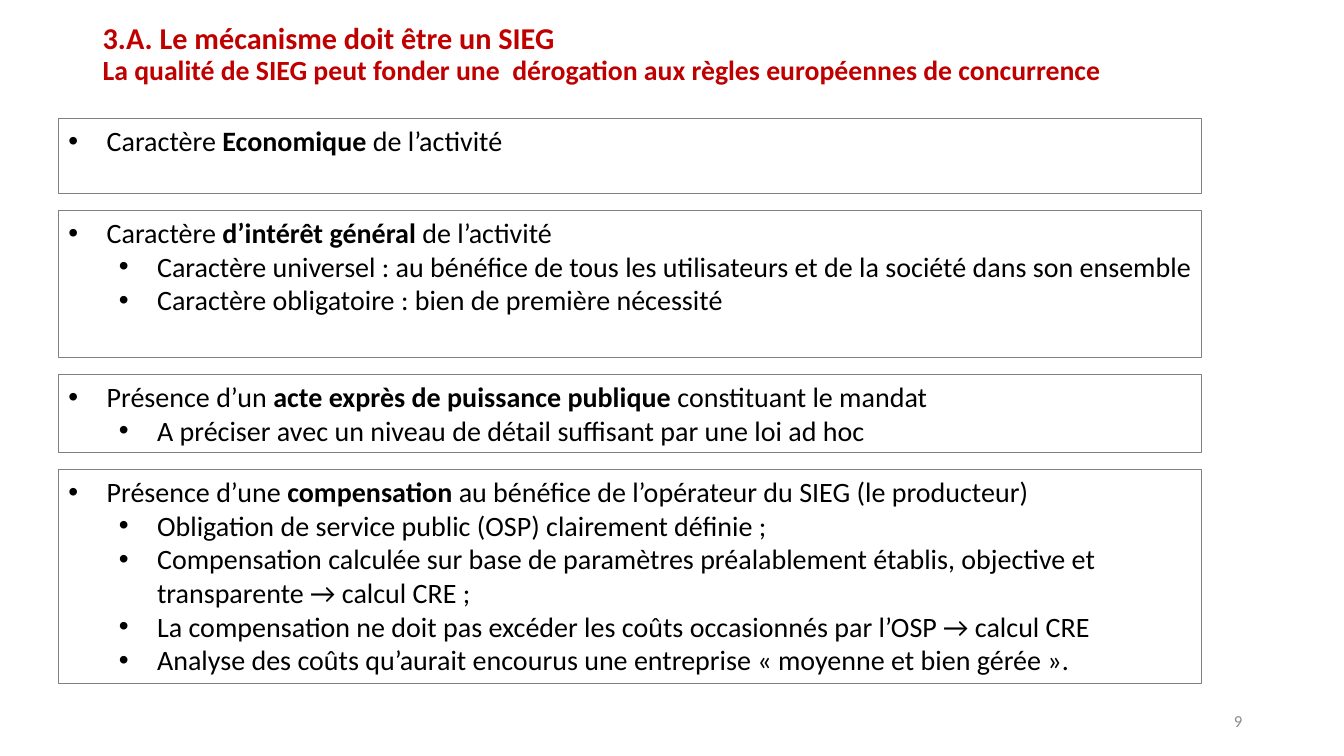
from dataclasses import dataclass

from lxml import etree
from pptx import Presentation
from pptx.dml.color import RGBColor
from pptx.enum.shapes import MSO_SHAPE
from pptx.enum.text import MSO_ANCHOR, PP_ALIGN
from pptx.oxml.ns import qn
from pptx.util import Inches, Pt

RECTANGLE = MSO_SHAPE.RECTANGLE
TOP, MIDDLE = MSO_ANCHOR.TOP, MSO_ANCHOR.MIDDLE
LEFT, RIGHT = PP_ALIGN.LEFT, PP_ALIGN.RIGHT

FONT = "Calibri"
RED, BLACK, GREY, PALE_GREY = "C00000", "000000", "808080", "8C8C8C"
CRITERIA_LEFT, CRITERIA_TOP, CRITERIA_WIDTH, CRITERIA_GAP = 0.58, 1.18, 11.34, 0.17
HANGING, LEVEL_STEP = 0.38, 0.5


@dataclass(frozen=True)
class Criterion:
    height: float
    before: str
    keyword: str
    after: str
    details: tuple[str, ...] = ()


CRITERIA = (
    Criterion(0.74, "Caractère ", "Economique", " de l’activité"),
    Criterion(1.46, "Caractère ", "d’intérêt général ", "de l’activité", (
        "Caractère universel : au bénéfice de tous les utilisateurs et de la société dans son ensemble",
        "Caractère obligatoire : bien de première nécessité",
    )),
    Criterion(0.77, "Présence d’un ", "acte exprès de puissance publique ", "constituant le mandat", (
        "A préciser avec un niveau de détail suffisant par une loi ad hoc",
    )),
    Criterion(2.12, "Présence d’une ", "compensation", " au bénéfice de l’opérateur du SIEG (le producteur)", (
        "Obligation de service public (OSP) clairement définie ;",
        "Compensation calculée sur base de paramètres préalablement établis, objective et transparente → calcul CRE ;",
        "La compensation ne doit pas excéder les coûts occasionnés par l’OSP → calcul CRE",
        "Analyse des coûts qu’aurait encourus une entreprise « moyenne et bien gérée ».",
    )),
)


def rgb(value: str) -> RGBColor:
    return RGBColor.from_string(value)


def apply(target, values: dict) -> None:
    for name, value in values.items():
        setattr(target, name, value)


def add_run(paragraph, text: str, size: float, color: str, bold: bool = False) -> None:
    run = paragraph.add_run()
    run.text = text
    apply(run.font, {"name": FONT, "size": Pt(size), "bold": bold})
    run.font.color.rgb = rgb(color)


def add_bullet(paragraph, level: int) -> None:
    apply(paragraph, {"level": level, "alignment": LEFT})
    properties = paragraph._p.get_or_add_pPr()
    properties.set("marL", str(Inches(HANGING + level * LEVEL_STEP)))
    properties.set("indent", str(-Inches(HANGING)))
    etree.SubElement(properties, qn("a:buFont")).set("typeface", "Arial")
    etree.SubElement(properties, qn("a:buChar")).set("char", "•")


def add_label(slide, left: float, top: float, width: float, height: float):
    label = slide.shapes.add_textbox(Inches(left), Inches(top), Inches(width), Inches(height))
    apply(label.text_frame, {"word_wrap": True, "vertical_anchor": MIDDLE})
    return label.text_frame.paragraphs[0]


def add_criterion(slide, criterion: Criterion, top: float) -> None:
    box = slide.shapes.add_shape(RECTANGLE, Inches(CRITERIA_LEFT), Inches(top),
                                 Inches(CRITERIA_WIDTH), Inches(criterion.height))
    box.shadow.inherit = False
    box.fill.background()
    box.line.color.rgb = rgb(GREY)
    box.line.width = Pt(0.75)
    frame = box.text_frame
    apply(frame, {"word_wrap": True, "vertical_anchor": TOP})
    heading = frame.paragraphs[0]
    add_bullet(heading, 0)
    add_run(heading, criterion.before, 20, BLACK)
    add_run(heading, criterion.keyword, 20, BLACK, bold=True)
    add_run(heading, criterion.after, 20, BLACK)
    for detail in criterion.details:
        paragraph = frame.add_paragraph()
        add_bullet(paragraph, 1)
        add_run(paragraph, detail, 20, BLACK)


def main() -> None:
    deck = Presentation()
    apply(deck, {"slide_width": Inches(13.33), "slide_height": Inches(7.5)})
    slide = deck.slides.add_slide(deck.slide_layouts[6])

    title = add_label(slide, 0.92, 0.18, 11.5, 0.73)
    title.line_spacing = 0.9
    add_run(title, "3.A. Le mécanisme doit être un SIEG", 21.6, RED, bold=True)
    title.add_line_break()
    add_run(title, "La qualité de SIEG peut fonder une  dérogation aux règles européennes de concurrence",
            19.8, RED, bold=True)

    top = CRITERIA_TOP
    for criterion in CRITERIA:
        add_criterion(slide, criterion, top)
        top += criterion.height + CRITERIA_GAP

    page_number = add_label(slide, 9.42, 6.95, 3, 0.4)
    page_number.alignment = RIGHT
    add_run(page_number, "9", 12, PALE_GREY)

    deck.save("out.pptx")


if __name__ == "__main__":
    main()
